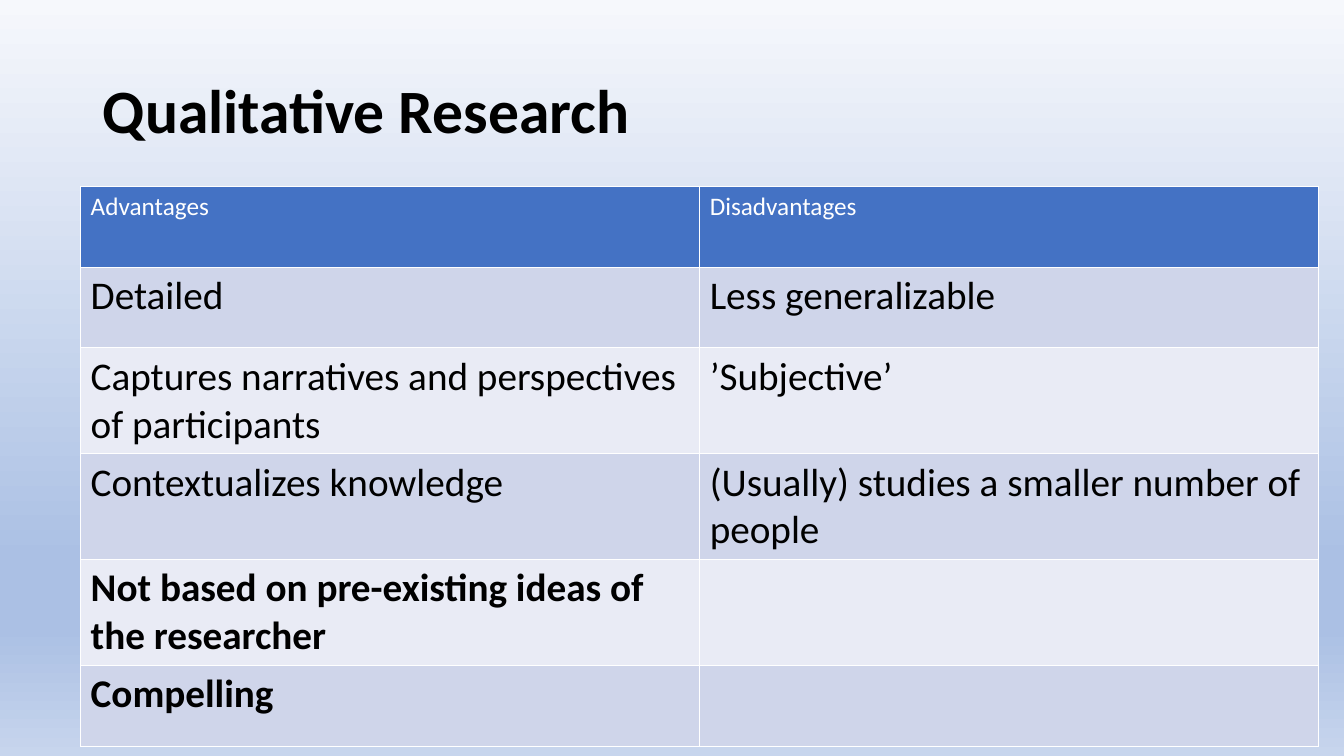
from dataclasses import dataclass

from lxml import etree
from pptx import Presentation
from pptx.dml.color import RGBColor
from pptx.enum.text import MSO_ANCHOR, MSO_AUTO_SIZE, PP_ALIGN
from pptx.oxml.ns import qn
from pptx.slide import Slide
from pptx.table import _Cell
from pptx.text.text import _Paragraph
from pptx.util import Inches, Pt

MIDDLE = MSO_ANCHOR.MIDDLE
LEFT = PP_ALIGN.LEFT
NO_AUTOFIT = MSO_AUTO_SIZE.NONE

FONT = "Calibri"
BLACK = RGBColor(0x00, 0x00, 0x00)
WHITE = RGBColor(0xFF, 0xFF, 0xFF)
HEADER_BLUE = RGBColor(0x44, 0x72, 0xC4)
BAND_DARK = RGBColor(0xCF, 0xD5, 0xEA)
BAND_LIGHT = RGBColor(0xE9, 0xEB, 0xF5)
SKY_PALE = RGBColor(0xF6, 0xF8, 0xFC)
SKY_DEEP = RGBColor(0xAB, 0xC0, 0xE4)
SKY_SOFT = RGBColor(0xC7, 0xD5, 0xED)
BACKGROUND_STOPS = [(0, SKY_PALE), (74, SKY_DEEP), (83, SKY_DEEP), (100, SKY_SOFT)]


@dataclass(frozen=True)
class ComparisonRow:
    advantage: str
    disadvantage: str = ""
    fill: RGBColor = BAND_DARK
    color: RGBColor = BLACK
    size: int = 28
    bold: bool = False


ROWS = [
    ComparisonRow("Advantages", "Disadvantages", HEADER_BLUE, WHITE, 18),
    ComparisonRow("Detailed", "Less generalizable"),
    ComparisonRow("Captures narratives and perspectives of participants",
                  "’Subjective’", BAND_LIGHT),
    ComparisonRow("Contextualizes knowledge",
                  "(Usually) studies a smaller number of people"),
    ComparisonRow("Not based on pre-existing ideas of the researcher",
                  fill=BAND_LIGHT, bold=True),
    ComparisonRow("Compelling", bold=True),
]


def add_run(paragraph: _Paragraph, text: str, size: int, color: RGBColor, bold: bool) -> None:
    run = paragraph.add_run()
    run.text = text
    run.font.name = FONT
    run.font.size = Pt(size)
    run.font.bold = bold
    run.font.color.rgb = color


def set_background(slide: Slide) -> None:
    fill = slide.background.fill
    fill.gradient()
    fill.gradient_angle = 270
    stop_list = slide.element.find(".//" + qn("a:gsLst"))
    for stop in list(stop_list):
        stop_list.remove(stop)
    for percent, color in BACKGROUND_STOPS:
        stop = etree.SubElement(stop_list, qn("a:gs"), pos=str(percent * 1000))
        etree.SubElement(stop, qn("a:srgbClr"), val=str(color))


def add_title(slide: Slide, text: str) -> None:
    title = slide.shapes.title
    title.left, title.top = Inches(0.92), Inches(0.4)
    title.width, title.height = Inches(11.5), Inches(1.45)
    frame = title.text_frame
    frame.auto_size = NO_AUTOFIT
    frame.word_wrap = True
    frame.vertical_anchor = MIDDLE
    paragraph = frame.paragraphs[0]
    paragraph.alignment = LEFT
    paragraph.line_spacing = 0.9
    add_run(paragraph, text, 44, BLACK, True)


def set_borders(cell: _Cell) -> None:
    properties = cell._tc.get_or_add_tcPr()
    for side in ("a:lnL", "a:lnR", "a:lnT", "a:lnB"):
        line = etree.SubElement(properties, qn(side), w=str(Pt(1)))
        solid = etree.SubElement(line, qn("a:solidFill"))
        etree.SubElement(solid, qn("a:srgbClr"), val=str(WHITE))


def add_comparison_table(slide: Slide, rows: list[ComparisonRow]) -> None:
    row_height = Inches(0.8)
    table = slide.shapes.add_table(
        len(rows), 2, Inches(0.8), Inches(1.85), Inches(12.28), row_height * len(rows)
    ).table
    table.first_row = False
    table.horz_banding = False
    for table_row, row in zip(table.rows, rows):
        table_row.height = row_height
        for cell, text in zip(table_row.cells, (row.advantage, row.disadvantage)):
            set_borders(cell)
            cell.fill.solid()
            cell.fill.fore_color.rgb = row.fill
            if text:
                add_run(cell.text_frame.paragraphs[0], text, row.size, row.color, row.bold)


def main() -> None:
    presentation = Presentation()
    presentation.slide_width = Inches(13.33)
    presentation.slide_height = Inches(7.5)
    slide = presentation.slides.add_slide(presentation.slide_layouts.get_by_name("Title Only"))
    set_background(slide)
    add_title(slide, "Qualitative Research")
    add_comparison_table(slide, ROWS)
    presentation.save("out.pptx")


if __name__ == "__main__":
    main()
